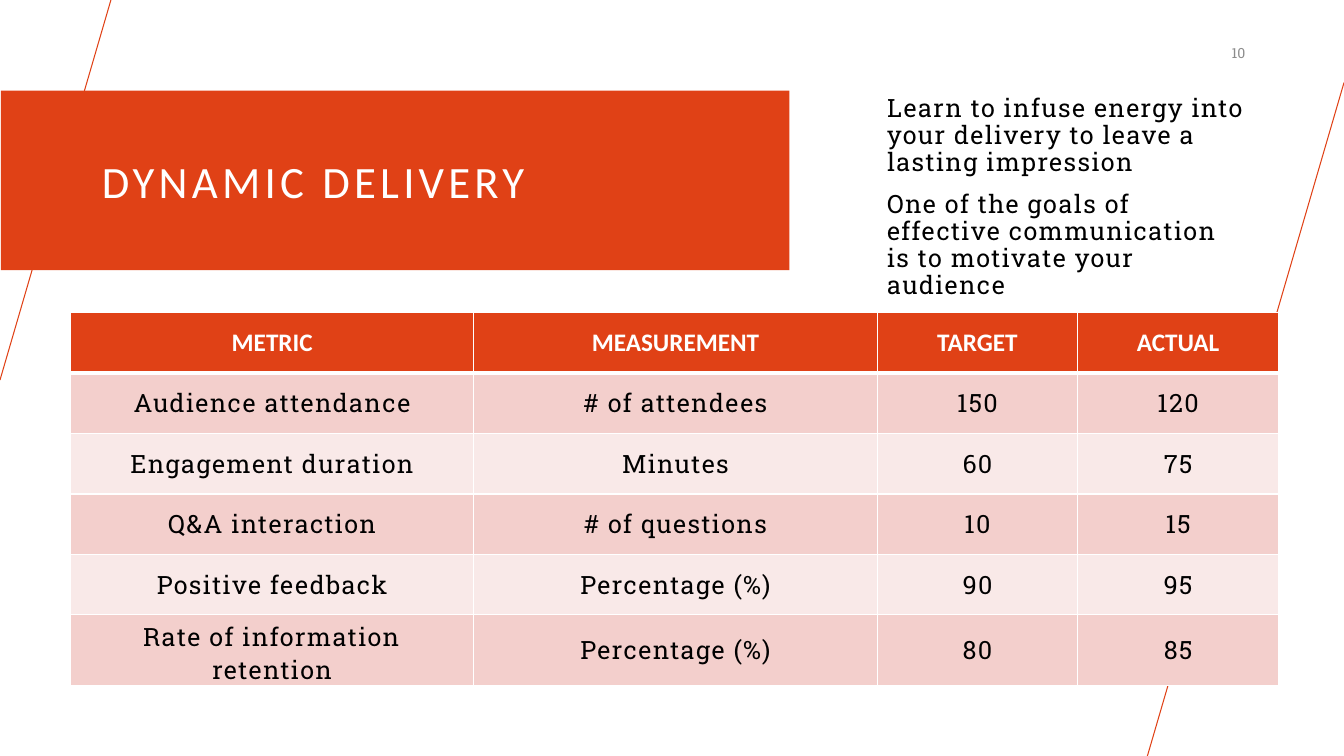
from dataclasses import dataclass

from lxml.etree import SubElement
from pptx import Presentation
from pptx.dml.color import RGBColor
from pptx.enum.shapes import MSO_CONNECTOR as Connector, MSO_SHAPE as Shape
from pptx.enum.text import MSO_ANCHOR as Anchor, PP_ALIGN as Align
from pptx.oxml.ns import qn
from pptx.slide import Slide
from pptx.table import _Cell as Cell
from pptx.text.text import TextFrame
from pptx.util import Inches, Pt

COLORS = {
    "accent": "E04116",
    "band_dark": "F3CFCC",
    "band_light": "F9E9E8",
    "white": "FFFFFF",
    "black": "000000",
    "gray": "8C8C8C",
}
HEADING_FONT = "Calibri"
BODY_FONT = "Roboto Slab"


@dataclass(frozen=True)
class Diagonal:
    start: tuple[float, float]
    end: tuple[float, float]


@dataclass(frozen=True)
class Metric:
    name: str
    measurement: str
    target: str
    actual: str


DIAGONALS = (
    Diagonal((1.1, 0), (0, 3.77)),
    Diagonal((13.33, 0.82), (11.38, 7.5)),
)
HEADER = Metric("METRIC", "MEASUREMENT", "TARGET", "ACTUAL")
METRICS = (
    Metric("Audience attendance", "# of attendees", "150", "120"),
    Metric("Engagement duration", "Minutes", "60", "75"),
    Metric("Q&A interaction", "# of questions", "10", "15"),
    Metric("Positive feedback", "Percentage (%)", "90", "95"),
    Metric("Rate of information retention", "Percentage (%)", "80", "85"),
)
COLUMN_WIDTHS = (4, 4, 1.99, 1.99)
ROW_HEIGHTS = (0.6, 0.6, 0.6, 0.6, 0.6, 0.67)
MESSAGES = (
    "Learn to infuse energy into your delivery to leave a lasting impression",
    "One of the goals of effective communication is to motivate your audience",
)


def rgb(name: str) -> RGBColor:
    return RGBColor.from_string(COLORS[name])


def write(frame: TextFrame, *texts: str, size: float = 18, font: str = BODY_FONT,
          color: str = "black", bold: bool = False, tracking: float = 0,
          align: Align = Align.LEFT, line_spacing: float = 1.0,
          space_before: float = 0) -> None:
    for index, text in enumerate(texts):
        para = frame.add_paragraph() if index else frame.paragraphs[0]
        para.alignment = align
        para.line_spacing = line_spacing
        para.space_before = Pt(space_before if index else 0)
        span = para.add_run()
        span.text = text
        span.font.size = Pt(size)
        span.font.name = font
        span.font.bold = bold
        span.font.color.rgb = rgb(color)
        if tracking:
            span.font._element.set("spc", str(int(tracking * 100)))


def add_text_box(page: Slide, left: float, top: float, width: float,
                 height: float, anchor: Anchor) -> TextFrame:
    box = page.shapes.add_textbox(
        Inches(left), Inches(top), Inches(width), Inches(height))
    box.text_frame.word_wrap = True
    box.text_frame.vertical_anchor = anchor
    return box.text_frame


def draw_diagonal(page: Slide, diagonal: Diagonal) -> None:
    line = page.shapes.add_connector(
        Connector.STRAIGHT, *map(Inches, diagonal.start + diagonal.end))
    line.line.color.rgb = rgb("accent")
    line.line.width = Pt(0.75)
    SubElement(line._element.spPr, qn("a:effectLst"))


def draw_banner(page: Slide) -> None:
    banner = page.shapes.add_shape(
        Shape.RECTANGLE, Inches(0.01), Inches(0.9), Inches(7.82), Inches(1.78))
    banner.shadow.inherit = False
    banner.fill.solid()
    banner.fill.fore_color.rgb = rgb("accent")
    banner.line.fill.background()
    frame = banner.text_frame
    frame.word_wrap = True
    frame.vertical_anchor = Anchor.MIDDLE
    frame.margin_left, frame.margin_right = Inches(1), Inches(0)
    frame.margin_top, frame.margin_bottom = Inches(0.25), Inches(0.25)
    write(frame, "DYNAMIC DELIVERY", size=32, font=HEADING_FONT,
          color="white", tracking=3)


def set_borders(cell: Cell, top: float, bottom: float) -> None:
    properties = cell._tc.get_or_add_tcPr()
    for side, width in (("L", 1), ("R", 1), ("T", top), ("B", bottom)):
        border = SubElement(properties, qn(f"a:ln{side}"), w=str(Pt(width)))
        fill = SubElement(border, qn("a:solidFill"))
        SubElement(fill, qn("a:srgbClr"), val=COLORS["white"])


def draw_table(page: Slide) -> None:
    rows = (HEADER, *METRICS)
    table = page.shapes.add_table(
        len(rows), len(COLUMN_WIDTHS), Inches(0.7), Inches(3.1),
        Inches(sum(COLUMN_WIDTHS)), Inches(sum(ROW_HEIGHTS))).table
    table.horz_banding = False
    for column, width in zip(table.columns, COLUMN_WIDTHS):
        column.width = Inches(width)
    for index, (metric, height) in enumerate(zip(rows, ROW_HEIGHTS)):
        table.rows[index].height = Inches(height)
        is_header = index == 0
        band = "band_dark" if index % 2 else "band_light"
        values = (metric.name, metric.measurement, metric.target, metric.actual)
        for cell, value in zip(table.rows[index].cells, values):
            set_borders(cell, top=3 if index == 1 else 1,
                        bottom=3 if is_header else 1)
            cell.fill.solid()
            cell.fill.fore_color.rgb = rgb("accent" if is_header else band)
            cell.vertical_anchor = Anchor.MIDDLE
            write(cell.text_frame, value, align=Align.CENTER, bold=is_header,
                  font=HEADING_FONT if is_header else BODY_FONT,
                  color="white" if is_header else "black",
                  tracking=0 if is_header else 1)


def main() -> None:
    deck = Presentation()
    deck.slide_width, deck.slide_height = Inches(13.33), Inches(7.5)
    page = deck.slides.add_slide(deck.slide_layouts[6])
    for diagonal in DIAGONALS:
        draw_diagonal(page, diagonal)
    draw_banner(page)
    write(add_text_box(page, 8.7, 0.9, 3.77, 1.79, Anchor.TOP), *MESSAGES,
          tracking=1, line_spacing=0.9, space_before=10)
    draw_table(page)
    write(add_text_box(page, 11.45, 0.35, 1, 0.35, Anchor.MIDDLE), "10",
          size=10, color="gray", align=Align.RIGHT)
    deck.save("out.pptx")


if __name__ == "__main__":
    main()
